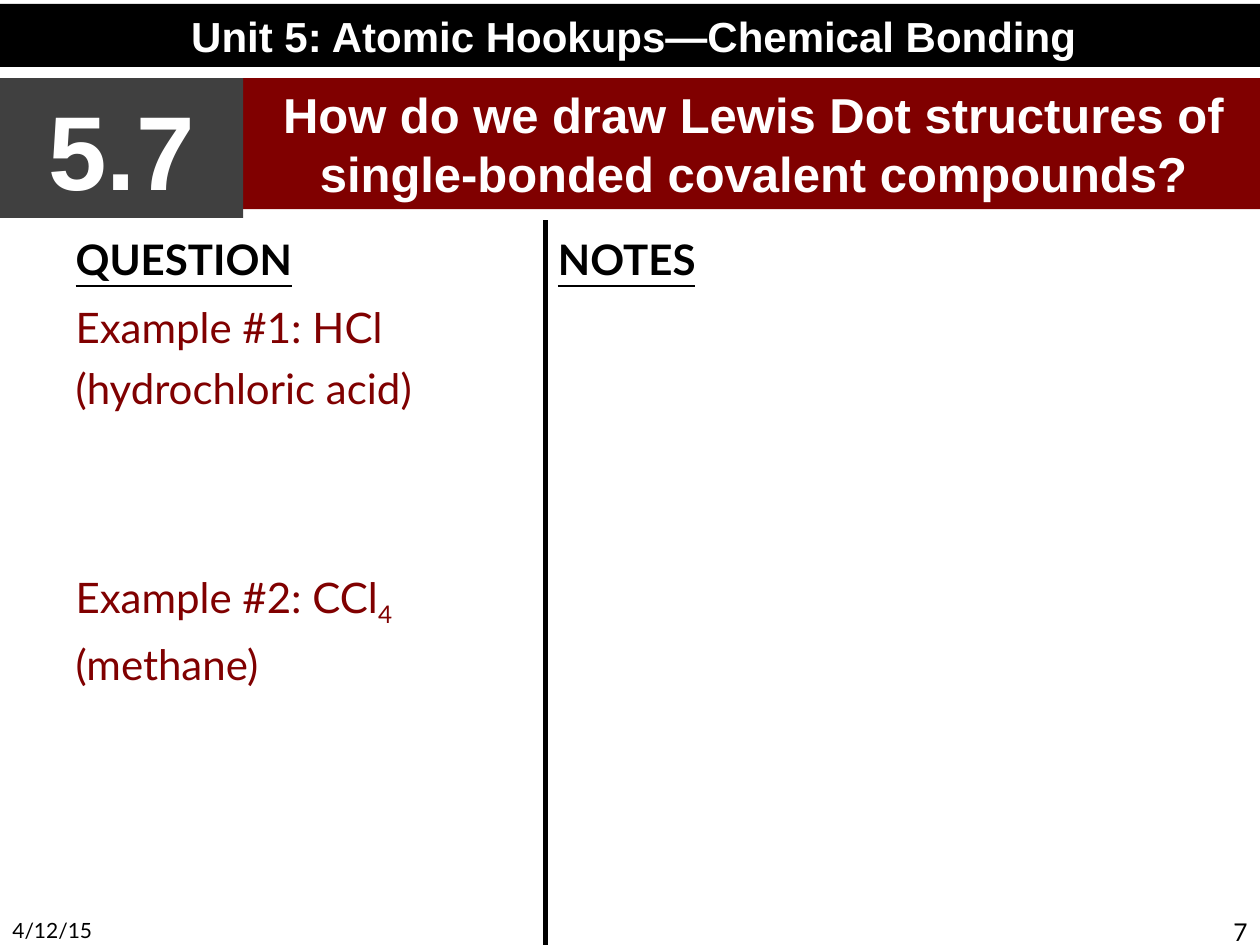
from dataclasses import dataclass, field

from lxml.etree import SubElement
from pptx import Presentation
from pptx.dml.color import RGBColor
from pptx.enum.shapes import MSO_CONNECTOR as Connector, MSO_SHAPE as Preset
from pptx.enum.text import MSO_ANCHOR as Anchor, MSO_AUTO_SIZE as AutoSize, PP_ALIGN as Align
from pptx.oxml.ns import qn
from pptx.util import Inches, Pt

BLACK = RGBColor(0x00, 0x00, 0x00)
WHITE = RGBColor(0xFF, 0xFF, 0xFF)
GREY = RGBColor(0x40, 0x40, 0x40)
MAROON = RGBColor(0x80, 0x00, 0x00)

# The grid has 100 columns and 100 rows
SLIDE_WIDTH, SLIDE_HEIGHT = Inches(10), Inches(7.5)
DIVIDER_COLUMN = 43.3
BANNER_ROW = 8.27
CONTENT_ROW, CONTENT_ROWS = 24, 66
FOOTER_ROW, FOOTER_ROWS, FOOTER_COLUMNS = 96.4, 3.6, 23.3
NUMBER_COLUMNS = 19.3

HEADING = {"name": "Lato", "size": Pt(24), "bold": True, "underline": True}
EXAMPLE = {"name": "Lato", "size": Pt(24), "bold": False, "underline": False}


@dataclass
class Area:
    column: float
    row: float
    columns: float
    rows: float

    def format(self) -> dict:
        return {"left": x(self.column), "top": y(self.row),
                "width": x(self.columns), "height": y(self.rows)}


@dataclass
class Line:
    runs: list[str]  # every second run is a subscript
    font: dict
    color: RGBColor = BLACK
    layout: dict = field(default_factory=dict)


@dataclass
class Bar:
    text: str
    size: int
    fill: RGBColor
    area: Area


def x(columns: float) -> int:
    return round(SLIDE_WIDTH * columns / 100)


def y(rows: float) -> int:
    return round(SLIDE_HEIGHT * rows / 100)


def set_format(target, values: dict) -> None:
    for name, value in values.items():
        setattr(target, name, value)


def write(shape, lines: list[Line], anchor=Anchor.TOP) -> None:
    frame = shape.text_frame
    set_format(frame, {"word_wrap": True, "auto_size": AutoSize.NONE,
                       "vertical_anchor": anchor})
    for index, line in enumerate(lines):
        paragraph = frame.add_paragraph() if index else frame.paragraphs[0]
        properties = paragraph._p.get_or_add_pPr()
        set_format(paragraph, {"space_before": Pt(0), **line.layout})
        properties.set("marL", "0")
        properties.set("indent", "0")
        SubElement(properties, qn("a:buNone"))
        for position, text in enumerate(line.runs):
            run = paragraph.add_run()
            run.text = text
            set_format(run.font, line.font)
            run.font.color.rgb = line.color
            if position % 2:
                run.font._element.set("baseline", "-25000")


def fill_bar(shape, bar: Bar) -> None:
    set_format(shape, bar.area.format())
    shape.fill.solid()
    shape.fill.fore_color.rgb = bar.fill
    shape.line.fill.background()
    font = {"name": "Arial", "size": Pt(bar.size), "bold": True}
    line = Line([bar.text], font, WHITE, {"alignment": Align.CENTER})
    write(shape, [line], Anchor.MIDDLE)


def add_bar(slide, bar: Bar) -> None:
    shape = slide.shapes.add_shape(Preset.RECTANGLE, *bar.area.format().values())
    shape.shadow.inherit = False
    fill_bar(shape, bar)


def add_text(slide, area: Area, line: Line) -> None:
    write(slide.shapes.add_textbox(*area.format().values()), [line])


def add_divider(slide) -> None:
    column = x(DIVIDER_COLUMN)
    divider = slide.shapes.add_connector(
        Connector.STRAIGHT, column, y(23.33), column, SLIDE_HEIGHT)
    divider.line.color.rgb = BLACK
    divider.line.width = Pt(3)
    SubElement(divider._element.spPr, qn("a:effectLst"))


def main() -> None:
    presentation = Presentation()
    set_format(presentation, {"slide_width": SLIDE_WIDTH, "slide_height": SLIDE_HEIGHT})
    slide = presentation.slides.add_slide(presentation.slide_layouts[1])

    # Unit, lesson number and lesson title
    add_bar(slide, Bar("Unit 5: Atomic Hookups—Chemical Bonding", 24, BLACK,
                       Area(0, 0.4, 100.6, 6.67)))
    add_bar(slide, Bar("5.7", 60, GREY, Area(0, BANNER_ROW, NUMBER_COLUMNS, 14.8)))
    fill_bar(slide.shapes.title, Bar(
        "How do we draw Lewis Dot structures of single-bonded covalent compounds?",
        28, MAROON, Area(NUMBER_COLUMNS, BANNER_ROW, 81, 13.87)))

    # Question column
    body = slide.placeholders[1]
    set_format(body, Area(5, CONTENT_ROW, 39.2, CONTENT_ROWS).format())
    write(body, [
        Line(["QUESTION"], HEADING),
        Line(["Example #1: HCl (hydrochloric acid)"], EXAMPLE, MAROON,
             {"line_spacing": 1.2, "space_before": Pt(4.8)}),
        Line(["Example #2: CCl", "4", " (methane)"], EXAMPLE, MAROON,
             {"line_spacing": 1.2, "space_before": Pt(84)}),
    ])

    # Notes column
    add_divider(slide)
    add_text(slide, Area(DIVIDER_COLUMN, CONTENT_ROW, 100 - DIVIDER_COLUMN, CONTENT_ROWS),
             Line(["NOTES"], HEADING))

    # Date and page number
    footers = [("4/12/15", 12, 0, Align.LEFT),
               ("7", 14, 100 - FOOTER_COLUMNS, Align.RIGHT)]
    for text, size, column, alignment in footers:
        add_text(slide, Area(column, FOOTER_ROW, FOOTER_COLUMNS, FOOTER_ROWS),
                 Line([text], {"name": "Lato", "size": Pt(size)}, BLACK,
                      {"alignment": alignment}))

    presentation.save("out.pptx")


if __name__ == "__main__":
    main()
